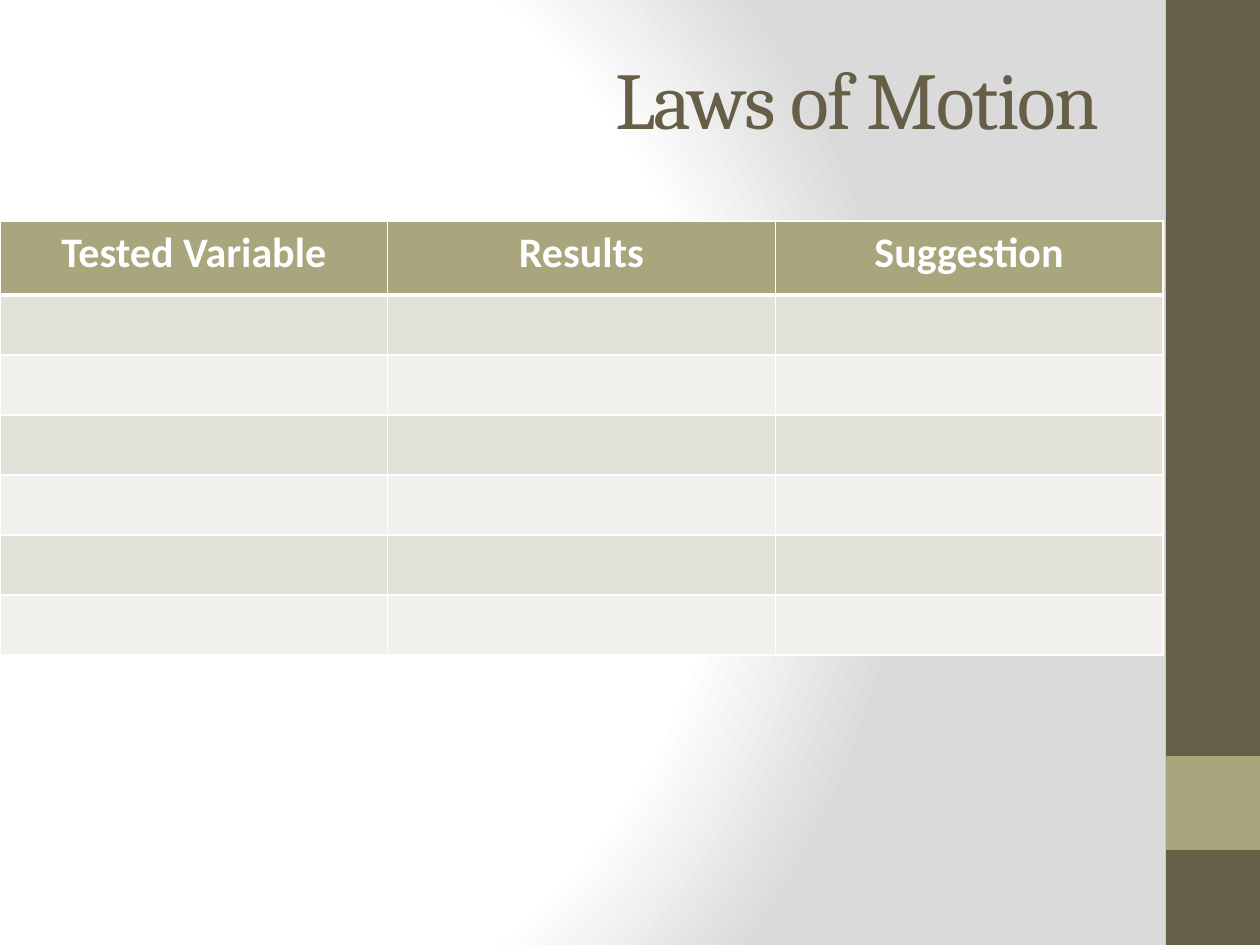
from pptx import Presentation
from pptx.dml.color import RGBColor
from pptx.enum.shapes import MSO_SHAPE as Shape
from pptx.enum.text import MSO_ANCHOR as Anchor, PP_ALIGN as Align
from pptx.oxml import parse_xml
from pptx.oxml.ns import nsdecls
from pptx.util import Emu, Pt

WIDTH, HEIGHT = 1260, 945
EMU_PER_PX = 914400 / 126
BROWN = RGBColor(0x67, 0x5E, 0x47)
OLIVE = RGBColor(0xA9, 0xA5, 0x7C)
BAND_DARK = RGBColor(0xE2, 0xE1, 0xD7)
BAND_LIGHT = RGBColor(0xF1, 0xF0, 0xEC)
WHITE = RGBColor(0xFF, 0xFF, 0xFF)
GRAY = RGBColor(0xDA, 0xDA, 0xDA)

TITLE_FORMAT = {"name": "Cambria", "size": Pt(46)}
HEADER_FORMAT = {"name": "Calibri", "size": Pt(24), "bold": True}
HEADERS = ["Tested Variable", "Results", "Suggestion"]
BODY_ROWS = 6


def px(*lengths):
    return [Emu(round(length * EMU_PER_PX)) for length in lengths]


class SlideBuilder:
    def __init__(self, slide):
        self.slide = slide

    def background(self, stops, center):
        self.slide.background.fill.solid()
        properties = self.slide.element.xpath(".//p:bgPr")[0]
        stop_xml = "".join(
            f'<a:gs pos="{position * 1000}"><a:srgbClr val="{color}"/></a:gs>'
            for position, color in stops
        )
        left, top, right, bottom = (side * 1000 for side in center)
        gradient = parse_xml(
            f'<a:gradFill {nsdecls("a")} rotWithShape="1"><a:gsLst>{stop_xml}</a:gsLst>'
            f'<a:path path="circle"><a:fillToRect l="{left}" t="{top}" '
            f'r="{right}" b="{bottom}"/></a:path></a:gradFill>'
        )
        properties.replace(properties[0], gradient)

    def rectangle(self, box, color):
        shape = self.slide.shapes.add_shape(Shape.RECTANGLE, *px(*box))
        shape.shadow.inherit = False
        shape.fill.solid()
        shape.fill.fore_color.rgb = color
        shape.line.fill.background()

    def text(self, paragraph, text, align, color, values):
        paragraph.alignment = align
        run = paragraph.add_run()
        run.text = text
        run.font.color.rgb = color
        for name, value in values.items():
            setattr(run.font, name, value)
        return run

    def title(self, box, text):
        frame = self.slide.shapes.add_textbox(*px(*box)).text_frame
        frame.word_wrap = True
        frame.vertical_anchor = Anchor.MIDDLE
        run = self.text(frame.paragraphs[0], text, Align.RIGHT, BROWN, TITLE_FORMAT)
        run.font._element.set("spc", "-100")

    def cell(self, cell, color, bottom):
        properties = cell._tc.get_or_add_tcPr()
        for side, width in {"L": 1, "R": 1, "T": 1, "B": bottom}.items():
            properties.append(parse_xml(
                f'<a:ln{side} {nsdecls("a")} w="{Pt(width)}"><a:solidFill>'
                f'<a:srgbClr val="{WHITE}"/></a:solidFill></a:ln{side}>'
            ))
        cell.fill.solid()
        cell.fill.fore_color.rgb = color

    def table(self, box, headers, heights):
        table = self.slide.shapes.add_table(len(heights), len(headers), *px(*box)).table
        for row, height in zip(table.rows, px(*heights)):
            row.height = height
        for index, row in enumerate(table.rows):
            for cell in row.cells:
                if index == 0:
                    self.cell(cell, OLIVE, 3)
                else:
                    self.cell(cell, BAND_DARK if index % 2 else BAND_LIGHT, 1)
        for cell, text in zip(table.rows[0].cells, headers):
            self.text(cell.text_frame.paragraphs[0], text, Align.CENTER, WHITE, HEADER_FORMAT)


def main():
    presentation = Presentation()
    presentation.slide_width, presentation.slide_height = px(WIDTH, HEIGHT)
    builder = SlideBuilder(presentation.slides.add_slide(presentation.slide_layouts[6]))
    builder.background([(0, WHITE), (75, WHITE), (100, GRAY)], (20, 50, 100, 50))
    builder.rectangle((1166, 0, 94, HEIGHT), BROWN)
    builder.rectangle((1166, 756, 94, 94), OLIVE)
    builder.title((144, 18, 968, 158), "Laws of Motion")
    heights = [74] + [60] * BODY_ROWS
    builder.table((0, 221, 1163, sum(heights)), HEADERS, heights)
    presentation.save("out.pptx")


if __name__ == "__main__":
    main()
